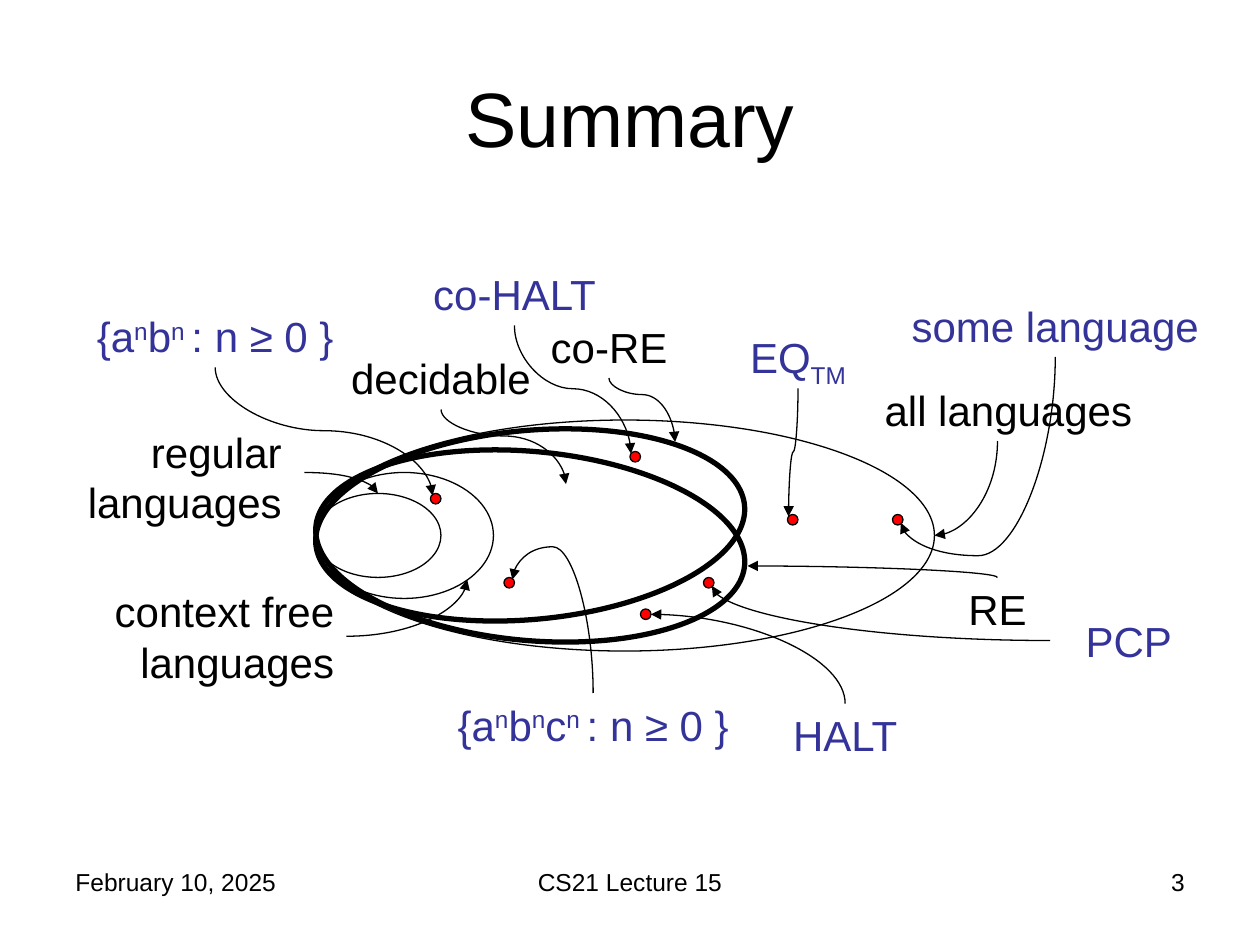
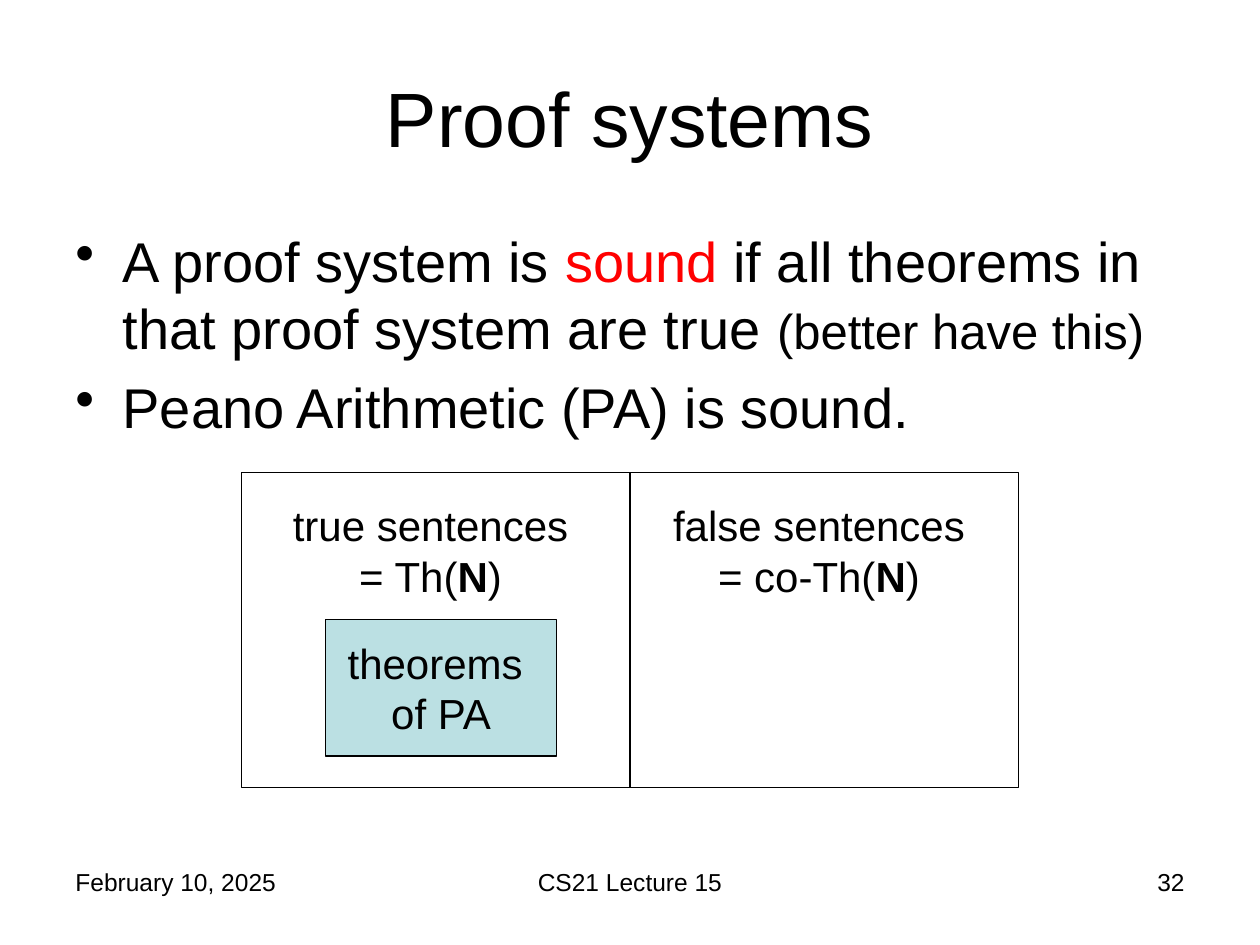
from dataclasses import dataclass
from typing import Any, NamedTuple, Optional

from pptx import Presentation
from pptx.dml.color import RGBColor
from pptx.enum.shapes import MSO_CONNECTOR as Link, MSO_SHAPE as Form
from pptx.enum.text import MSO_ANCHOR as Anchor, PP_ALIGN as Align
from pptx.oxml.ns import qn
from pptx.oxml.xmlchemy import OxmlElement as make
from pptx.util import Emu, Pt

SCALE = 7620
WIDE, HIGH = 1200, 900
FONT = "Arial"
BLACK = RGBColor(0x00, 0x00, 0x00)
BLUE = RGBColor(0x33, 0x33, 0x99)
RED = RGBColor(0xFF, 0x00, 0x00)
TEAL = RGBColor(0xBB, 0xE0, 0xE3)
UP, DOWN = 30000, -25000
DOT = 10
LINE, DEEP = 60, 108
TILT = 5.2

# (starts upright, goes right, goes down): degrees, flip
TURNS = {
    (False, True, True): (0, None),
    (False, True, False): (0, "flipV"),
    (False, False, False): (180, None),
    (True, True, True): (270, "flipH"),
    (True, False, True): (90, None),
    (True, False, False): (90, "flipH"),
}


class Bit(NamedTuple):
    """A run of text and what sets it apart."""
    text: str
    base: int = 0
    bold: bool = False
    hue: Optional[RGBColor] = None
    size: Optional[int] = None


def px(num):
    """Turn px into EMU."""
    return Emu(round(num * SCALE))


def child(node, tag, **attrs):
    """Append an XML element with its attributes."""
    part = make(tag)
    for key, val in attrs.items():
        part.set(key, str(val))
    node.append(part)
    return part


def write(para, bits, size, hue=BLACK, align=Align.LEFT, before=0):
    """Fill a paragraph run by run."""
    para.alignment = align
    if before:
        gap = child(para._p.get_or_add_pPr(), "a:spcBef")
        child(gap, "a:spcPct", val=before * 1000)
    for bit in bits:
        run = para.add_run()
        run.text = bit.text
        font = run.font
        font.name, font.bold = FONT, bit.bold
        font.size = Pt(bit.size or size)
        font.color.rgb = bit.hue or hue
        if bit.base:
            run._r.get_or_add_rPr().set("baseline", str(bit.base))


@dataclass
class Pane:
    """A region of a slide whose parts are placed from its corner."""
    slide: Any
    left: int
    top: int

    def frame(self, x, y, w, h, anchor=Anchor.TOP):
        """Add a wrapping text box and give its text frame."""
        box = self.slide.shapes.add_textbox(
            px(self.left + x), px(self.top + y), px(w), px(h))
        text = box.text_frame
        text.word_wrap = True
        text.vertical_anchor = anchor
        return text

    def label(self, x, y, w, h, bits, hue=BLACK, align=Align.CENTER):
        """Add a label in the diagram text size."""
        para = self.frame(x, y, w, h).paragraphs[0]
        write(para, bits, 24, hue, align, before=50)

    def shape(self, form, x, y, w, h, fill=None, width=0.75, turn=0):
        """Add an outlined shape."""
        item = self.slide.shapes.add_shape(
            form, px(self.left + x), px(self.top + y), px(w), px(h))
        item.shadow.inherit = False
        item.rotation = turn
        item.line.color.rgb = BLACK
        item.line.width = Pt(width)
        if fill is None:
            item.fill.background()
        else:
            item.fill.solid()
            item.fill.fore_color.rgb = fill
        return item

    def arrow(self, x1, y1, x2, y2, upright=True, bend=None):
        """Add a curved arrow that leaves upright or level."""
        w, h = abs(x2 - x1), abs(y2 - y1)
        if upright:
            w, h = h, w
        x = self.left + (x1 + x2 - w) / 2
        y = self.top + (y1 + y2 - h) / 2
        curve = self.slide.shapes.add_connector(
            Link.CURVE, px(x), px(y), px(x + w), px(y + h))
        curve.line.color.rgb = BLACK
        curve.line.width = Pt(0.75)
        child(curve.line._get_or_add_ln(), "a:tailEnd", type="triangle")
        props = curve._element.spPr
        turn, flip = TURNS[upright, x2 > x1, y2 > y1]
        xfrm = props.find(qn("a:xfrm"))
        xfrm.set("rot", str(turn * 60000))
        if flip:
            xfrm.set(flip, "1")
        geom = props.find(qn("a:prstGeom"))
        if bend is None:
            geom.set("prst", "curvedConnector2")
        else:
            child(geom.find(qn("a:avLst")), "a:gd", name="adj1",
                  fmla=f"val {round(bend * 100000)}")
        child(props, "a:effectLst")


def start(deck, title, page):
    """Add a blank slide with its title and footer."""
    slide = deck.slides.add_slide(deck.slide_layouts[6])
    foot = Pane(slide, 60, 820)
    for x, w, text, align in (
            (0, 280, "February 10, 2025", Align.LEFT),
            (350, 380, "CS21 Lecture 15", Align.CENTER),
            (800, 280, str(page), Align.RIGHT)):
        para = foot.frame(x, 0, w, 62).paragraphs[0]
        write(para, [Bit(text)], 14, align=align)
    head = Pane(slide, 60, 36).frame(0, 0, 1080, 150, Anchor.MIDDLE)
    write(head.paragraphs[0], [Bit(title)], 44, align=Align.CENTER)
    return slide


def classes(pane):
    """Draw the nested language classes and their sample members."""
    for y, w, h, width, turn in (
            (150, 590, 220, 0.75, 0),
            (200, 170, 120, 0.75, 0),
            (220, 120, 80, 0.75, 0),
            (180, 410, 180, 3, TILT),
            (160, 410, 180, 3, -TILT)):
        pane.shape(Form.OVAL, 270, y, w, h, width=width, turn=turn)
    for x, y in ((380, 220), (450, 300), (820, 240), (580, 330),
                 (570, 180), (640, 300), (720, 240)):
        pane.shape(Form.OVAL, x, y, DOT, DOT, RED)


def names(pane):
    """Label the classes in black and the members in blue."""
    for x, y, w, h, text, align in (
            (30, 150, 220, DEEP, "regular languages", Align.RIGHT),
            (20, 302, 280, DEEP, "context free languages", Align.RIGHT),
            (780, 110, 280, LINE, "all languages", Align.RIGHT),
            (250, 80, 280, LINE, "decidable", Align.CENTER),
            (780, 300, 280, LINE, "RE", Align.CENTER),
            (410, 50, 280, LINE, "co-RE", Align.CENTER)):
        pane.label(x, y, w, h, [Bit(text)], align=align)
    power, last, tail = Bit("n", UP), Bit("n ", UP), Bit(": n ≥ 0 }")
    for x, y, w, bits in (
            (0, 40, 350, [Bit("{a"), power, Bit("b"), last, tail]),
            (360, 410, 350,
             [Bit("{a"), power, Bit("b"), power, Bit("c"), last, tail]),
            (800, 30, 350, [Bit("some language")]),
            (700, 420, 150, [Bit("HALT")]),
            (340, 0, 240, [Bit("co-HALT")]),
            (970, 330, 150, [Bit("PCP")]),
            (610, 60, 240, [Bit("EQ"), Bit("TM", DOWN)])):
        pane.label(x, y, w, LINE, bits, BLUE)


def arrows(pane):
    """Lead from each label to its class or member."""
    for ends in ((260, 200, 330, 220), (300, 356, 415, 302),
                 (970, 360, 648, 308)):
        pane.arrow(*ends, upright=False)
    for *ends, bend in (
            (920, 170, 860, 260, None),
            (920, 300, 682, 289, None),
            (775, 420, 590, 335, None),
            (390, 140, 509, 211, 0.355),
            (175, 100, 382, 222, 0.494),
            (535, 410, 458, 302, 1.29),
            (975, 90, 828, 248, 1.198),
            (550, 110, 613, 171, 0.259),
            (460, 60, 571, 182, 0.494),
            (730, 120, 721, 242, 0.494)):
        pane.arrow(*ends, bend=bend)


def points(pane):
    """Write the bulleted statements."""
    text = pane.frame(0, 0, 1080, 230)
    first = [Bit("A proof system is "), Bit("sound ", hue=RED),
             Bit("if all theorems in that proof system are true "),
             Bit("(better have this)", size=28)]
    second = [Bit("Peano Arithmetic (PA) is sound.")]
    for para, bits in ((text.paragraphs[0], first),
                       (text.add_paragraph(), second)):
        write(para, bits, 32, before=20)
        props = para._p.get_or_add_pPr()
        props.set("marL", str(px(45)))
        props.set("indent", str(px(-45)))
        child(props, "a:buChar", char="•")


def halves(pane):
    """Draw true and false sentences with the theorems inside."""
    w, h = 370, 300
    for col, text in enumerate(("true sentences = Th(",
                                "false sentences = co-Th(")):
        pane.shape(Form.RECTANGLE, col * w, 0, w, h)
        pane.label(col * w + 20, 20, 320, DEEP,
                   [Bit(text), Bit("N", bold=True), Bit(")")])
    inner = pane.shape(Form.RECTANGLE, 80, 140, 220, 130, TEAL).text_frame
    inner.word_wrap = False
    inner.vertical_anchor = Anchor.MIDDLE
    for para, text in ((inner.paragraphs[0], "theorems "),
                       (inner.add_paragraph(), "of PA")):
        write(para, [Bit(text)], 24, align=Align.CENTER)


def main():
    """Build both slides and save them."""
    deck = Presentation()
    deck.slide_width, deck.slide_height = px(WIDE), px(HIGH)
    chart = Pane(start(deck, "Summary", 3), 30, 250)
    classes(chart)
    names(chart)
    arrows(chart)
    proof = start(deck, "Proof systems", 32)
    points(Pane(proof, 60, 210))
    halves(Pane(proof, 230, 450))
    deck.save("out.pptx")


if __name__ == "__main__":
    main()
